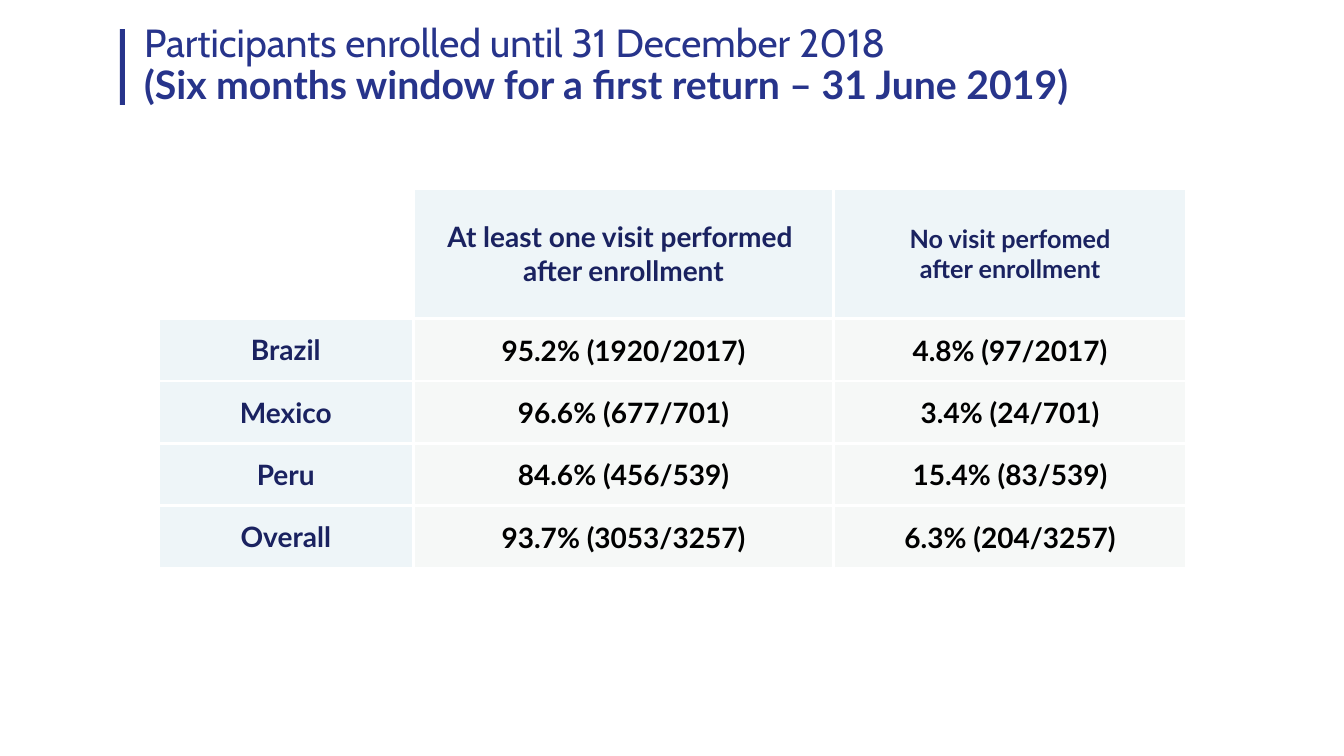
from pptx import Presentation
from pptx.dml.color import RGBColor
from pptx.enum.shapes import MSO_SHAPE as Shape
from pptx.enum.text import MSO_ANCHOR as Anchor, MSO_AUTO_SIZE as Fit, PP_ALIGN as Align
from pptx.oxml import parse_xml
from pptx.oxml.ns import nsdecls
from pptx.util import Pt

# Colours
BLUE = RGBColor(0x27, 0x34, 0x8B)
NAVY = RGBColor(0x1A, 0x22, 0x60)
BLACK = RGBColor(0, 0, 0)
WHITE = RGBColor(0xFF, 0xFF, 0xFF)
PALE = RGBColor(0xEE, 0xF5, 0xF8)
GREY = RGBColor(0xF6, 0xF8, 0xF7)

# Content
TITLE = [
    ("Participants enrolled until 31 December 2018", "Cabin", False),
    ("(Six months window for a first return – 31 June 2019)", "Lato", True),
]
ROWS = [
    ("", "At least one visit performed \nafter enrollment", "No visit perfomed\nafter enrollment"),
    ("Brazil", "95.2% (1920/2017)", "4.8% (97/2017)"),
    ("Mexico", "96.6% (677/701)", "3.4% (24/701)"),
    ("Peru", "84.6% (456/539)", "15.4% (83/539)"),
    ("Overall", "93.7% (3053/3257)", "6.3% (204/3257)"),
]
WIDTHS = (182.3, 300.2, 252)
HEIGHTS = (92.9,) + (44.64,) * 4


def apply(item, style):
    for name, value in style.items():
        setattr(item, name, value)


def box(x, y, width, height):
    return dict(left=Pt(x), top=Pt(y), width=Pt(width), height=Pt(height))


class Deck:
    def __init__(self):
        self.file = Presentation()
        apply(self.file, dict(slide_width=Pt(960), slide_height=Pt(540)))
        self.slide = self.file.slides.add_slide(self.file.slide_layouts[5])
        self.head = dict(name="Lato", size=Pt(20), bold=True)

    def bar(self, place, tint):
        bar = self.slide.shapes.add_shape(Shape.RECTANGLE, **place)
        bar.shadow.inherit = False
        bar.fill.solid()
        bar.fill.fore_color.rgb = tint
        bar.line.fill.background()

    def title(self, place, lines):
        title = self.slide.shapes.title
        apply(title, place)
        frame = title.text_frame
        frame.text = "\n".join(text for text, _, _ in lines)
        apply(frame, dict(word_wrap=True, auto_size=Fit.NONE, vertical_anchor=Anchor.MIDDLE))
        for para, (_, face, bold) in zip(frame.paragraphs, lines):
            apply(para, dict(alignment=Align.LEFT, line_spacing=0.9))
            apply(para.font, dict(name=face, size=Pt(28), bold=bold))
            para.font.color.rgb = BLUE

    def table(self, place, rows):
        table = self.slide.shapes.add_table(len(rows), len(WIDTHS), **place).table
        apply(table, dict(first_row=False, horz_banding=False))
        for column, width in zip(table.columns, WIDTHS):
            column.width = Pt(width)
        for row, height in zip(table.rows, HEIGHTS):
            row.height = Pt(height)
        for r, texts in enumerate(rows):
            for c, text in enumerate(texts):
                self.cell(table.cell(r, c), text, r, c)

    def cell(self, cell, text, row, col):
        label = row == 0 or col == 0
        side = Pt(5 if label else 0.7)
        top = Pt(0 if label else 0.7)
        cell.text = text
        apply(cell, dict(vertical_anchor=Anchor.MIDDLE, margin_left=side,
                         margin_right=side, margin_top=top, margin_bottom=0))
        self.edge(cell)
        if text:
            cell.fill.solid()
            cell.fill.fore_color.rgb = PALE if label else GREY
        else:
            cell.fill.background()
        for para in cell.text_frame.paragraphs:
            para.alignment = Align.CENTER
            apply(para.font, self.head)
            para.font.color.rgb = NAVY if label else BLACK
            if (row, col) == (0, 2):
                para.font.size = Pt(18)

    def edge(self, cell):
        # Cell borders come before the fill
        props = cell._tc.get_or_add_tcPr()
        for side in "LRTB":
            props.append(parse_xml(
                f'<a:ln{side} {nsdecls("a")} w="{Pt(2.25)}"><a:solidFill>'
                f'<a:srgbClr val="{WHITE}"/></a:solidFill></a:ln{side}>'))

    def save(self):
        self.file.save("out.pptx")


def main():
    deck = Deck()
    # Heading
    deck.bar(box(85.7, 20.9, 3.6, 54), BLUE)
    deck.title(box(95.8, 7.2, 800, 79.2), TITLE)
    # Visits by country
    deck.table(box(113, 134.6, sum(WIDTHS), sum(HEIGHTS)), ROWS)
    deck.save()


if __name__ == "__main__":
    main()
